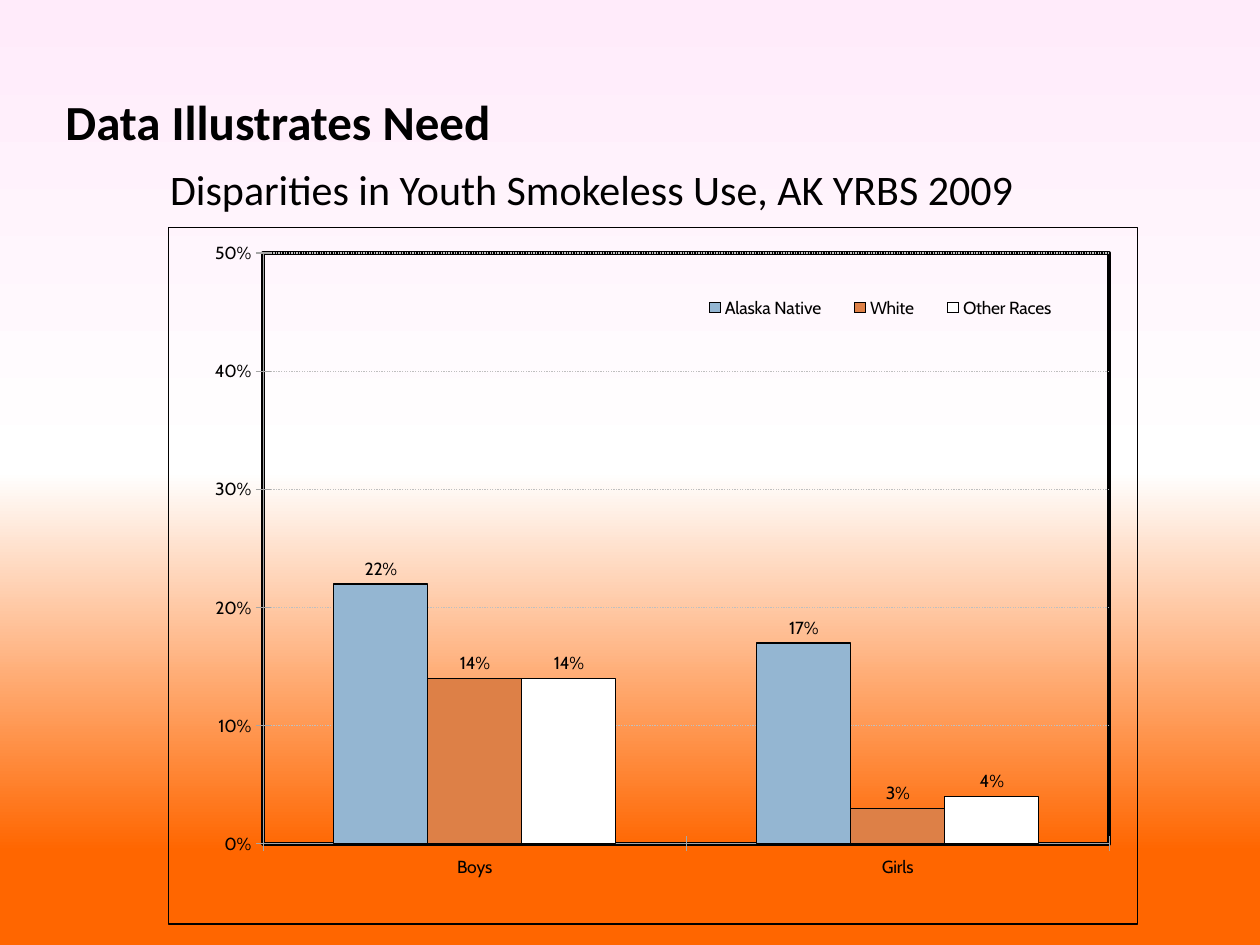
import pptx
import pptx.chart.data
import pptx.dml.color
import pptx.enum.chart
import pptx.enum.dml
import pptx.enum.text
import pptx.oxml
import pptx.oxml.ns
import pptx.util

Cm = pptx.util.Cm
Pt = pptx.util.Pt
qn = pptx.oxml.ns.qn
chart_enums = pptx.enum.chart

THEME = {
    "text": "000000",
    "outline": "000000",
    "grid": "BFBFBF",
    "axis": "A6A6A6",
    "text_font": "Calibri",
    "chart_font": "Cabin",
    "title_size": 28,
    "subtitle_size": 24,
    "chart_size": 10,
    "thin": 0.75,
    "frame": 2.25,
}

# Position in percent, colour, opacity in percent; running from bottom to top
BACKGROUND_STOPS = [(10, "FF6600", 65), (50, "FFFFFF", 100), (100, "FFEBFA", 100)]

# Boxes are left, top, width, height in centimetres
TEXTS = [
    {"text": "Data Illustrates Need", "box": (1.07, 1.73, 23.06, 1.45),
     "font": {"size": Pt(THEME["title_size"]), "bold": True},
     "auto_size": pptx.enum.text.MSO_AUTO_SIZE.SHAPE_TO_FIT_TEXT},
    {"text": "Disparities in Youth Smokeless Use, AK YRBS 2009",
     "box": (3.18, 3.18, 20.75, 1.22),
     "font": {"size": Pt(THEME["subtitle_size"]), "bold": False},
     "auto_size": pptx.enum.text.MSO_AUTO_SIZE.NONE},
]

CHART_BOX = (3.38, 4.57, 19.56, 14.07)
CATEGORIES = ["Boys", "Girls"]
OUTSIDE = chart_enums.XL_LABEL_POSITION.OUTSIDE_END
SERIES = [
    ("Alaska Native", (0.22, 0.17), "94B6D2", OUTSIDE),
    ("White", (0.14, 0.03), "DD8047", None),
    ("Other Races", (0.14, 0.04), "FFFFFF", OUTSIDE),
]

# Shares of the chart's width and height: left, top, width, height
PLOT_LAYOUT = (0.098, 0.037, 0.873, 0.848)
LEGEND_LAYOUT = (0.53, 0.09, 0.41, 0.05)

VALUE_AXIS = {
    "minimum_scale": 0,
    "maximum_scale": 0.5,
    "major_unit": 0.1,
    "has_major_gridlines": True,
}


def set_values(target, values):
    for name, value in values.items():
        setattr(target, name, value)


def colour(value):
    return pptx.dml.color.RGBColor.from_string(value)


def style_font(font, name, values):
    set_values(font, {"name": name, **values})
    font.color.rgb = colour(THEME["text"])


def style_line(line, value, width):
    line.color.rgb = colour(value)
    line.width = Pt(width)


def parse_xml(body):
    """Parse an element whose opening tag has the marker NS for the namespaces."""
    return pptx.oxml.parse_xml(body.replace("NS", pptx.oxml.ns.nsdecls("a", "c"), 1))


def paint_background(slide):
    fill = slide.background.fill
    fill.gradient()
    fill.gradient_angle = 90
    stops = "".join(
        f'<a:gs pos="{position * 1000}"><a:srgbClr val="{value}">'
        f'<a:alpha val="{opacity * 1000}"/></a:srgbClr></a:gs>'
        for position, value, opacity in BACKGROUND_STOPS
    )
    stop_list = next(slide.element.iter(qn("a:gsLst")))
    stop_list.getparent().replace(stop_list, parse_xml(f"<a:gsLst NS>{stops}</a:gsLst>"))


def add_text(slide, item):
    frame = slide.shapes.add_textbox(*map(Cm, item["box"])).text_frame
    set_values(frame, {"word_wrap": True, "auto_size": item["auto_size"]})
    run = frame.paragraphs[0].add_run()
    run.text = item["text"]
    style_font(run.font, THEME["text_font"], item["font"])


def set_layout(parent, index, shares, inner=False):
    """Give a chart part a fixed place, as its child number index."""
    for previous in parent.findall(qn("c:layout")):
        parent.remove(previous)
    target = '<c:layoutTarget val="inner"/>' if inner else ""
    modes = '<c:xMode val="edge"/><c:yMode val="edge"/>'
    places = "".join(
        f'<c:{name} val="{share}"/>' for name, share in zip("xywh", shares)
    )
    parent.insert(index, parse_xml(
        f"<c:layout NS><c:manualLayout>{target}{modes}{places}"
        "</c:manualLayout></c:layout>"
    ))


def outline_properties(width):
    return parse_xml(
        f'<c:spPr NS><a:noFill/><a:ln w="{Pt(width)}"><a:solidFill>'
        f'<a:srgbClr val="{THEME["outline"]}"/></a:solidFill></a:ln></c:spPr>'
    )


def style_axes(chart):
    set_values(chart.value_axis, VALUE_AXIS)
    for axis in (chart.category_axis, chart.value_axis):
        axis.major_tick_mark = chart_enums.XL_TICK_MARK.CROSS
        style_line(axis.format.line, THEME["axis"], THEME["thin"])
    set_values(chart.value_axis.tick_labels,
               {"number_format": "0%", "number_format_is_linked": False})
    grid = chart.value_axis.major_gridlines.format.line
    style_line(grid, THEME["grid"], THEME["thin"])
    grid.dash_style = pptx.enum.dml.MSO_LINE.ROUND_DOT


def style_series(series, fill_colour, label_position):
    series.format.fill.solid()
    series.format.fill.fore_color.rgb = colour(fill_colour)
    style_line(series.format.line, THEME["outline"], THEME["thin"])
    labels = series.data_labels
    set_values(labels, {"show_value": True, "number_format": "0%",
                        "number_format_is_linked": False})
    if label_position is not None:
        labels.position = label_position


def add_usage_chart(slide):
    data = pptx.chart.data.CategoryChartData(number_format="0%")
    data.categories = CATEGORIES
    for name, values, _, _ in SERIES:
        data.add_series(name, values)
    chart = slide.shapes.add_chart(
        chart_enums.XL_CHART_TYPE.COLUMN_CLUSTERED, *map(Cm, CHART_BOX), data
    ).chart
    set_values(chart, {"has_title": False, "has_legend": True})
    style_font(chart.font, THEME["chart_font"], {"size": Pt(THEME["chart_size"])})
    style_axes(chart)

    plot = chart.plots[0]
    set_values(plot, {"gap_width": 150, "overlap": 0, "vary_by_categories": False})
    for series, (_, _, fill_colour, position) in zip(plot.series, SERIES):
        style_series(series, fill_colour, position)

    set_values(chart.legend, {"position": chart_enums.XL_LEGEND_POSITION.CORNER,
                              "include_in_layout": True})

    chart_part = chart.element.find(qn("c:chart"))
    plot_area = chart_part.find(qn("c:plotArea"))
    set_layout(chart_part.find(qn("c:legend")), 1, LEGEND_LAYOUT)
    set_layout(plot_area, 0, PLOT_LAYOUT, inner=True)
    plot_area.append(outline_properties(THEME["frame"]))
    chart_part.addnext(outline_properties(THEME["thin"]))


def main():
    presentation = pptx.Presentation()
    set_values(presentation, {"slide_width": Cm(25.4), "slide_height": Cm(19.05)})
    slide = presentation.slides.add_slide(presentation.slide_layouts[6])
    paint_background(slide)
    for item in TEXTS:
        add_text(slide, item)
    add_usage_chart(slide)
    presentation.save("out.pptx")


if __name__ == "__main__":
    main()
